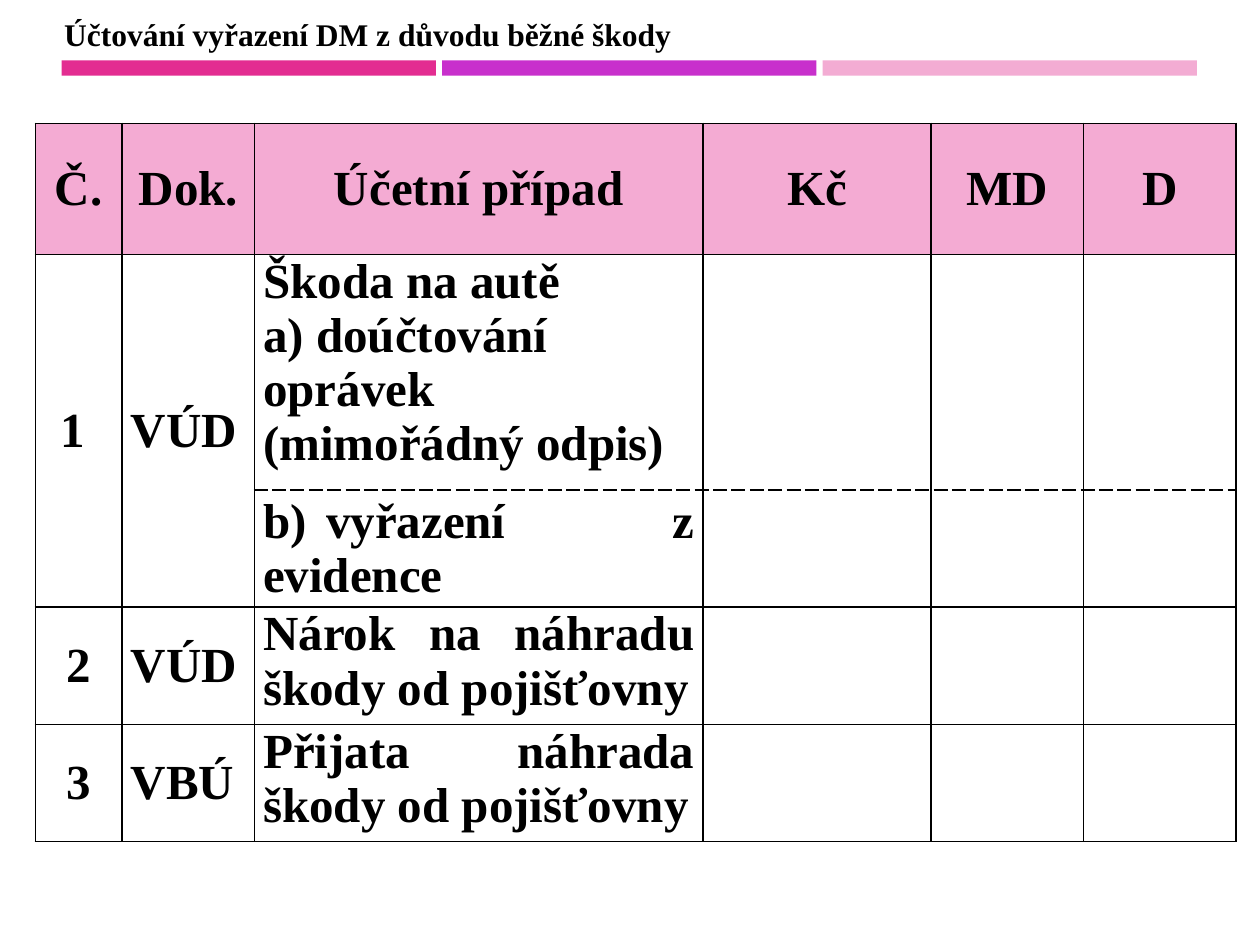
from lxml.etree import SubElement
from pptx import Presentation
from pptx.dml.color import RGBColor
from pptx.enum.shapes import MSO_SHAPE
from pptx.enum.text import MSO_ANCHOR, MSO_AUTO_SIZE, PP_ALIGN
from pptx.oxml import parse_xml
from pptx.oxml.ns import nsdecls, qn
from pptx.util import Inches, Pt

BLACK = RGBColor(0x00, 0x00, 0x00)
HEADER_PINK = RGBColor(0xF4, 0xAB, 0xD3)
BAR_COLORS = [
    RGBColor(0xE3, 0x2D, 0x91),
    RGBColor(0xC8, 0x30, 0xCC),
    RGBColor(0xF3, 0xAC, 0xD3),
]
FONT = "Times New Roman"

COLUMNS = [0.69, 1.05, 3.56, 1.81, 1.21, 1.21]
ROWS = [1.04, 1.87, 0.93, 0.93, 0.93]
CASE_COLUMN = 2
HEADER = ["Č.", "Dok.", "Účetní případ", "Kč", "MD", "D"]
ENTRIES = [
    ["1\u00a0", "VÚD", "Škoda na autě\na) doúčtování oprávek (mimořádný odpis)"],
    ["", "", "b)\tvyřazení z evidence"],
    ["2", "VÚD", "Nárok na náhradu škody od pojišťovny"],
    ["3", "VBÚ", "Přijata náhrada škody od pojišťovny"],
]
ENTRY_ALIGNS = [PP_ALIGN.CENTER, PP_ALIGN.LEFT, PP_ALIGN.JUSTIFY]


def style_paragraph(p, size, align):
    p.alignment = align
    p.font.name = FONT
    p.font.size = Pt(size)
    p.font.bold = True
    p.font.color.rgb = BLACK


def add_bars(slide):
    for i, color in enumerate(BAR_COLORS):
        sp = slide.shapes.add_shape(
            MSO_SHAPE.RECTANGLE, Inches(0.49 + i * 3.02), Inches(0.48),
            Inches(2.97), Inches(0.12))
        sp.shadow.inherit = False
        sp.fill.solid()
        sp.fill.fore_color.rgb = color
        sp.line.fill.background()


def set_title(slide, text):
    title = slide.shapes.title
    title.left, title.top = Inches(0.41), Inches(0.07)
    title.width, title.height = Inches(5.07), Inches(0.4)
    tf = title.text_frame
    tf.text = text
    tf.word_wrap = False
    tf.auto_size = MSO_AUTO_SIZE.NONE
    tf.vertical_anchor = MSO_ANCHOR.TOP
    style_paragraph(tf.paragraphs[0], 18, PP_ALIGN.LEFT)


def set_borders(cell, dashed_sides):
    tcPr = cell._tc.get_or_add_tcPr()
    for i, side in enumerate("LRTB"):
        dash = "sysDash" if side in dashed_sides else "solid"
        tcPr.insert(i, parse_xml(
            f'<a:ln{side} {nsdecls("a")} w="12700"><a:solidFill>'
            f'<a:srgbClr val="{BLACK}"/></a:solidFill>'
            f'<a:prstDash val="{dash}"/></a:ln{side}>'))


def add_tab_stop(p, position):
    tabs = SubElement(p._p.get_or_add_pPr(), qn("a:tabLst"))
    SubElement(tabs, qn("a:tab"), pos=str(Inches(position)), algn="l")


def fill_cell(cell, text, align, anchor):
    cell.margin_left = cell.margin_right = Inches(0.07)
    cell.margin_top = cell.margin_bottom = 0
    cell.vertical_anchor = anchor
    cell.text_frame.text = text
    for p in cell.text_frame.paragraphs:
        style_paragraph(p, 28, align)
        if "\t" in text:
            add_tab_stop(p, 0.5)


def add_header(table):
    for cell, text in zip(table.rows[0].cells, HEADER):
        fill_cell(cell, text, PP_ALIGN.CENTER, MSO_ANCHOR.MIDDLE)
        cell.fill.solid()
        cell.fill.fore_color.rgb = HEADER_PINK
        set_borders(cell, "")


def add_entries(table):
    for r, entry in enumerate(ENTRIES, 1):
        for c, cell in enumerate(table.rows[r].cells):
            if c < len(entry):
                top = c == CASE_COLUMN and r != 2
                align = PP_ALIGN.LEFT if "\n" in entry[c] else ENTRY_ALIGNS[c]
                fill_cell(cell, entry[c], align,
                          MSO_ANCHOR.TOP if top else MSO_ANCHOR.MIDDLE)
            cell.fill.background()
            dashed = {1: "B", 2: "T"}.get(r, "") if c >= CASE_COLUMN else ""
            set_borders(cell, dashed)
    for c in range(CASE_COLUMN):
        table.cell(1, c).merge(table.cell(2, c))


def add_ledger(slide):
    table = slide.shapes.add_table(
        len(ROWS), len(COLUMNS), Inches(0.28), Inches(0.98),
        Inches(sum(COLUMNS)), Inches(sum(ROWS))).table
    table.first_row = table.horz_banding = False
    for column, width in zip(table.columns, COLUMNS):
        column.width = Inches(width)
    for row, height in zip(table.rows, ROWS):
        row.height = Inches(height)
    add_header(table)
    add_entries(table)


def main():
    prs = Presentation()
    prs.slide_width, prs.slide_height = Inches(10), Inches(7.5)
    slide = prs.slides.add_slide(prs.slide_layouts[5])
    add_bars(slide)
    set_title(slide, "Účtování vyřazení DM z důvodu běžné škody")
    add_ledger(slide)
    prs.save("out.pptx")


if __name__ == "__main__":
    main()
